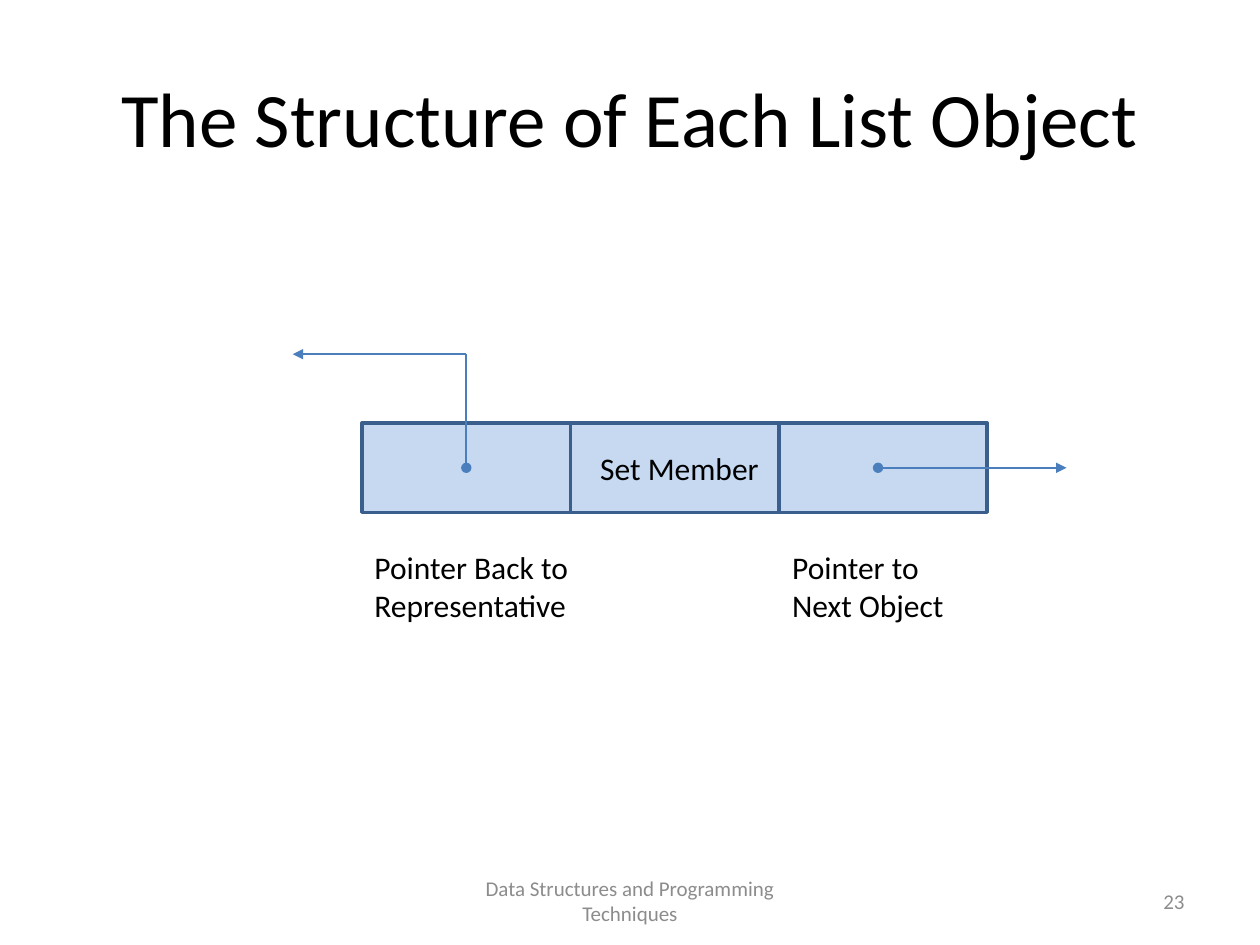
import pptx
import pptx.util
import pptx.dml.color
import pptx.enum.shapes
import pptx.enum.text
import pptx.oxml
import pptx.oxml.ns

Cm = pptx.util.Cm
Pt = pptx.util.Pt
RGBColor = pptx.dml.color.RGBColor
ALIGN = pptx.enum.text.PP_ALIGN
ANCHOR = pptx.enum.text.MSO_ANCHOR

BLACK = RGBColor(0x00, 0x00, 0x00)
GREY = RGBColor(0x8C, 0x8C, 0x8C)
CELL_FILL = RGBColor(0xC6, 0xD9, 0xF1)
CELL_EDGE = RGBColor(0x3A, 0x5F, 0x8C)
ARROW = RGBColor(0x4B, 0x7E, 0xBC)

HEADING = "The Structure of Each List Object"
CELL_COUNT = 3
CELL_LEFT, CELL_TOP, CELL_WIDTH, CELL_HEIGHT = 7.3, 8.53, 4.2, 1.8
MIDDLE = CELL_TOP + CELL_HEIGHT / 2
BACK_X, BACK_Y = 9.4, 7.14

LABELS = [
    (["Pointer Back to", "Representative"], (7.3, 10.92, 5, 1.8), 18, BLACK, ALIGN.LEFT, ANCHOR.TOP),
    (["Pointer to Next Object"], (15.72, 10.92, 4.4, 1.8), 18, BLACK, ALIGN.LEFT, ANCHOR.TOP),
    (["Set Member"], (11.5, 8.92, 4.4, 1.02), 18, BLACK, ALIGN.CENTER, ANCHOR.TOP),
    (["Data Structures and Programming Techniques"], (8.68, 17.65, 8.04, 1.02), 12, GREY,
     ALIGN.CENTER, ANCHOR.MIDDLE),
    (["23"], (18.2, 17.65, 5.93, 1.02), 12, GREY, ALIGN.RIGHT, ANCHOR.MIDDLE),
]

POINTERS = [
    ((17.7, MIDDLE), (21.5, MIDDLE), {"headEnd": "oval", "tailEnd": "triangle"}),
    ((BACK_X, MIDDLE), (BACK_X, BACK_Y), {"headEnd": "oval"}),
    ((BACK_X, BACK_Y), (5.9, BACK_Y), {"tailEnd": "triangle"}),
]


def write(frame, lines, size, color, align, anchor):
    frame.word_wrap = True
    frame.vertical_anchor = anchor
    frame.text = "\n".join(lines)
    for paragraph in frame.paragraphs:
        paragraph.alignment = align
        paragraph.font.name = "Calibri"
        paragraph.font.size = Pt(size)
        paragraph.font.color.rgb = color


def add_cell(slide, index):
    cell = slide.shapes.add_shape(
        pptx.enum.shapes.MSO_SHAPE.RECTANGLE,
        Cm(CELL_LEFT + index * CELL_WIDTH), Cm(CELL_TOP), Cm(CELL_WIDTH), Cm(CELL_HEIGHT))
    cell.shadow.inherit = False
    cell.fill.solid()
    cell.fill.fore_color.rgb = CELL_FILL
    cell.line.color.rgb = CELL_EDGE
    cell.line.width = Pt(2)


def add_pointer(slide, start, end, tips):
    pointer = slide.shapes.add_connector(
        pptx.enum.shapes.MSO_CONNECTOR.STRAIGHT, *[Cm(value) for value in start + end])
    pointer.line.color.rgb = ARROW
    pointer.line.width = Pt(1)
    outline = pointer.line._get_or_add_ln()
    for tag, kind in tips.items():
        tip = pptx.oxml.parse_xml(f'<a:{tag} {pptx.oxml.ns.nsdecls("a")} type="{kind}"/>')
        outline.append(tip)
    properties = pointer._element.spPr
    properties.append(pptx.oxml.parse_xml(f'<a:effectLst {pptx.oxml.ns.nsdecls("a")}/>'))


def main():
    deck = pptx.Presentation()
    deck.slide_width, deck.slide_height = Cm(25.4), Cm(19.05)
    slide = deck.slides.add_slide(deck.slide_layouts[5])

    heading = slide.shapes.title
    heading.left, heading.top, heading.width, heading.height = Cm(1.27), Cm(0.76), Cm(22.86), Cm(3.18)
    write(heading.text_frame, [HEADING], 44, BLACK, ALIGN.CENTER, ANCHOR.MIDDLE)

    for index in range(CELL_COUNT):
        add_cell(slide, index)
    for start, end, tips in POINTERS:
        add_pointer(slide, start, end, tips)
    for lines, box, *style in LABELS:
        label = slide.shapes.add_textbox(*[Cm(value) for value in box])
        write(label.text_frame, lines, *style)

    deck.save("out.pptx")


if __name__ == "__main__":
    main()
